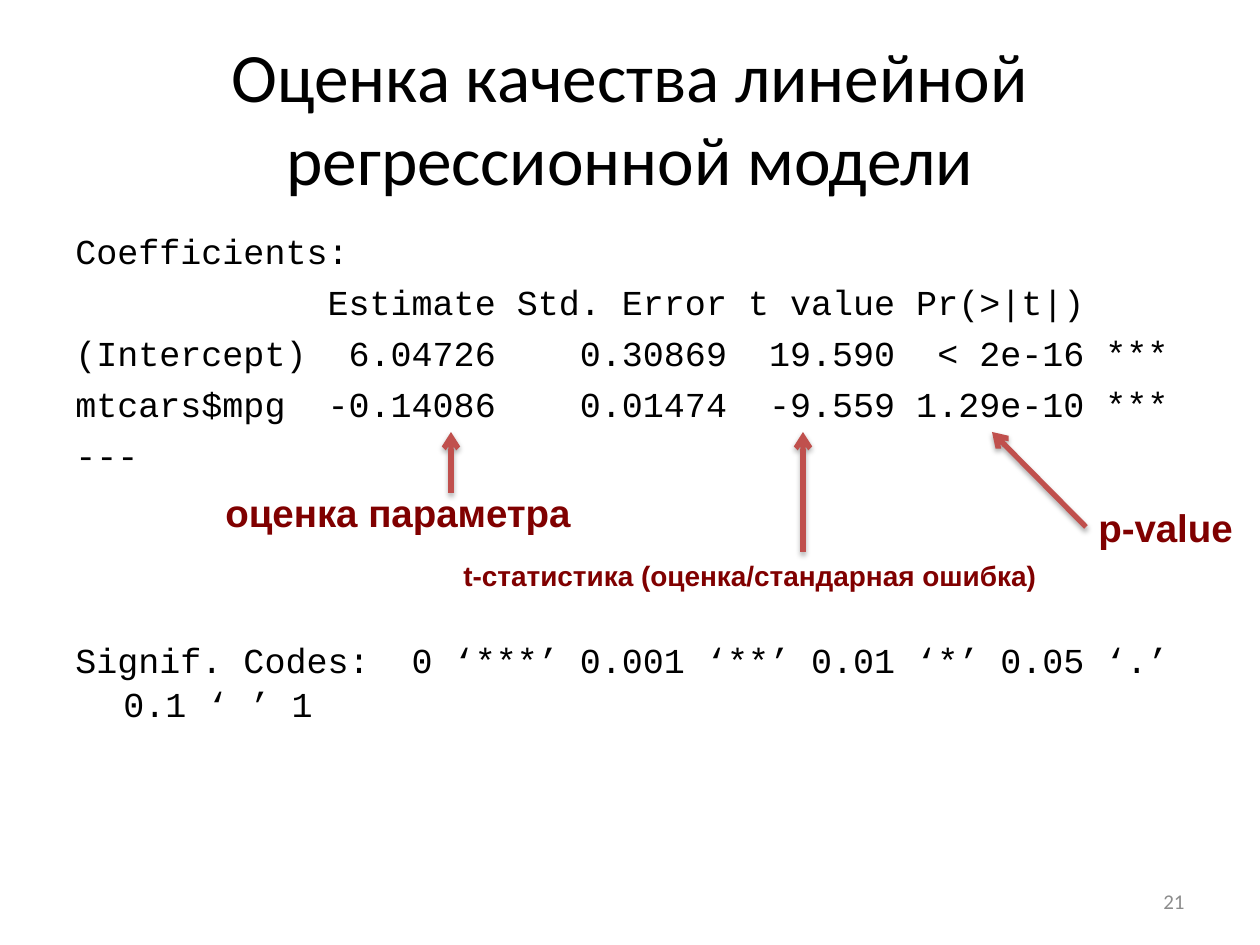
import lxml.etree
import pptx
import pptx.dml.color
import pptx.enum.shapes
import pptx.enum.text
import pptx.oxml.ns
import pptx.util

PX = 914400 / 126
ALIGN = pptx.enum.text.PP_ALIGN
ANCHOR = pptx.enum.text.MSO_ANCHOR
MAROON = "800000"
LINE_SPACING = 25.2
ROW_GAP = 4
SECTION_GAP = 3 * LINE_SPACING + 4 * ROW_GAP

OUTPUT = [
    "Coefficients:",
    "            Estimate Std. Error t value Pr(>|t|)",
    "(Intercept)  6.04726    0.30869  19.590  < 2e-16 ***",
    "mtcars$mpg  -0.14086    0.01474  -9.559 1.29e-10 ***",
    "---",
]
LEGEND = "Signif. Codes:  0 ‘***’ 0.001 ‘**’ 0.01 ‘*’ 0.05 ‘.’ 0.1 ‘ ’ 1"


def px(n):
    return pptx.util.Emu(round(n * PX))


def color(value):
    return pptx.dml.color.RGBColor.from_string(value)


def text(s, box, lines, size=20, font="Arial", fill="000000", bold=False,
         align=ALIGN.LEFT, anchor=ANCHOR.TOP):
    """Add a text box with one paragraph per line and return its text frame."""
    tf = s.shapes.add_textbox(*map(px, box)).text_frame
    tf.word_wrap = True
    tf.vertical_anchor = anchor
    for i, line in enumerate(lines):
        p = tf.add_paragraph() if i else tf.paragraphs[0]
        p.alignment = align
        r = p.add_run()
        r.text = line
        r.font.size = pptx.util.Pt(size)
        r.font.name = font
        r.font.bold = bold
        r.font.color.rgb = color(fill)
    return tf


def arrow(s, start, end):
    """Draw a shadowed line with an open arrowhead at its end."""
    c = s.shapes.add_connector(pptx.enum.shapes.MSO_CONNECTOR.STRAIGHT,
                               *map(px, start + end))
    c.line.color.rgb = color("C0504D")
    c.line.width = pptx.util.Pt(3)
    qn = pptx.oxml.ns.qn
    sub = lxml.etree.SubElement
    sub(c.line._get_or_add_ln(), qn("a:tailEnd"), type="arrow")
    effects = sub(c._element.spPr, qn("a:effectLst"))
    shadow = sub(effects, qn("a:outerShdw"), blurRad="40000", dist="23000",
                 dir="5400000", rotWithShape="0")
    sub(sub(shadow, qn("a:srgbClr"), val="000000"), qn("a:alpha"), val="35000")


def regression_output(s, box):
    tf = text(s, box, OUTPUT + [LEGEND], font="Courier New")
    for i, p in enumerate(tf.paragraphs):
        p.line_spacing = pptx.util.Pt(LINE_SPACING)
        p.space_before = pptx.util.Pt(ROW_GAP if i else 0)
        pPr = p._p.get_or_add_pPr()
        pPr.set("marL", str(px(48)))
        pPr.set("indent", str(-px(48)))
    tf.paragraphs[-1].space_before = pptx.util.Pt(SECTION_GAP)


def annotations(s, box):
    """Label the estimate, t value and p-value columns from below."""
    x, y, w, h = box
    labels = [
        ("t-статистика (оценка/стандарная ошибка)", 16, 238, 120, 665, 45),
        ("p-value", 22, 873, 66, 174, 102),
        ("оценка параметра", 22, 0, 51, 446, 57),
    ]
    for label, size, dx, dy, width, height in labels:
        text(s, (x + dx, y + dy, width, height), [label], size=size,
             fill=MAROON, bold=True)
    for x1, y1, x2 in [(873, 95, 779), (590, 120, 590), (238, 61, 238)]:
        arrow(s, (x + x1, y + y1), (x + x2, y))


def main():
    prs = pptx.Presentation()
    prs.slide_width, prs.slide_height = px(1260), px(945)
    s = prs.slides.add_slide(prs.slide_layouts[6])
    text(s, (63, 38, 1134, 157),
         ["Оценка качества линейной регрессионной модели"], size=39.6,
         font="Calibri", align=ALIGN.CENTER, anchor=ANCHOR.MIDDLE)
    regression_output(s, (63, 221, 1134, 623))
    text(s, (903, 876, 294, 50), ["21"], size=12, font="Calibri",
         fill="8C8C8C", align=ALIGN.RIGHT, anchor=ANCHOR.MIDDLE)
    annotations(s, (213, 432, 1047, 165))
    prs.save("out.pptx")


if __name__ == "__main__":
    main()
